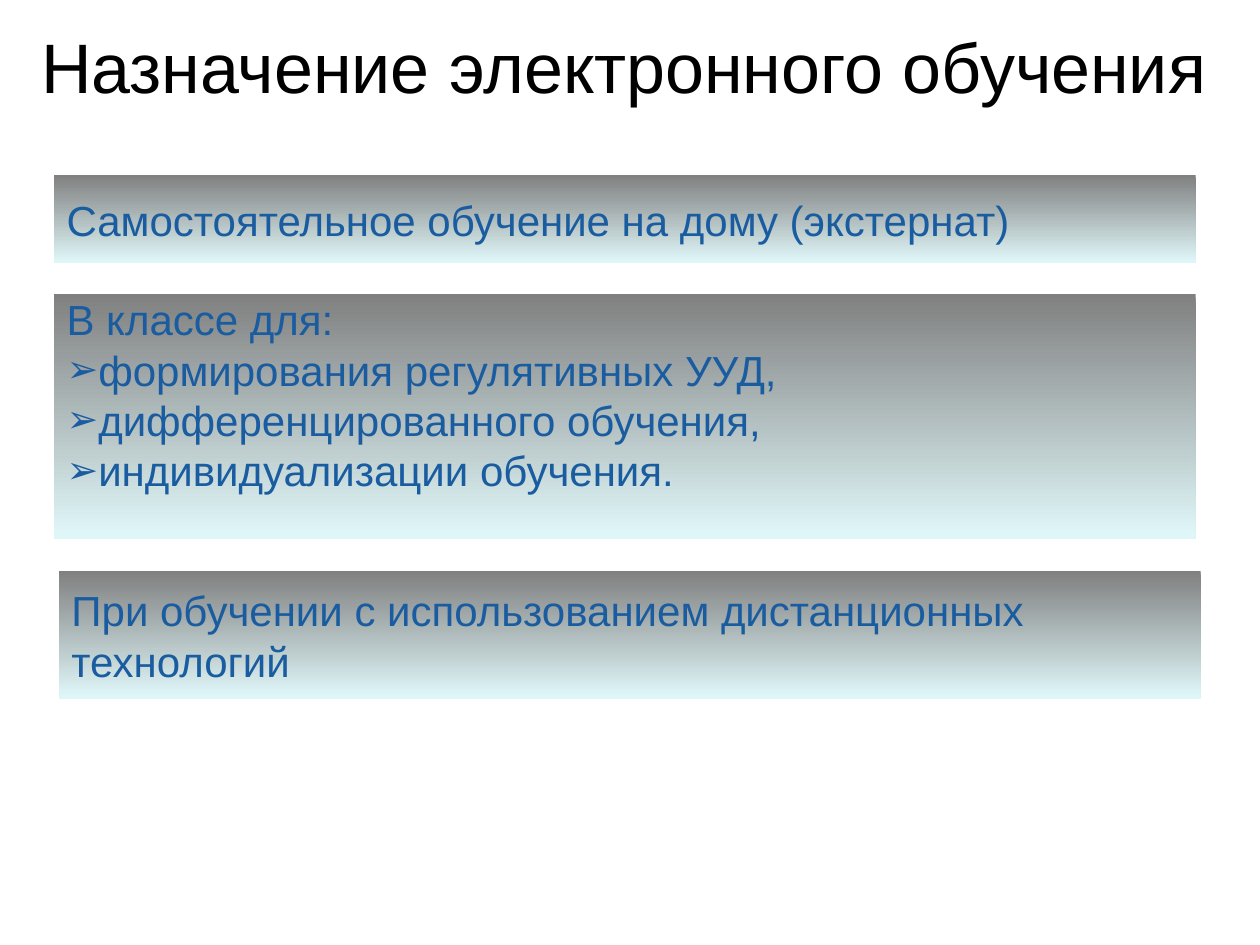
"""Builds a slide on the purposes of e-learning: a title and three gradient panels."""
from lxml import etree
from pptx import Presentation
from pptx import util as u
from pptx.dml import color
from pptx.enum import shapes, text
from pptx.oxml import ns

FONT = "Arial"
INK, BLUE, GREY, ICE = "000000", "1A5CA0", "808080", "DFF6F8"
HEADING = "Назначение электронного обучения"
PANEL_WIDTH = 652.3
PANELS = [
    {"left": 31, "top": 100.1, "height": 50.4, "anchor": text.MSO_ANCHOR.MIDDLE,
     "lead": "Самостоятельное обучение на дому (экстернат)", "points": []},
    {"left": 31, "top": 167.8, "height": 140.4, "anchor": text.MSO_ANCHOR.TOP,
     "lead": "В классе для:",
     "points": ["формирования регулятивных УУД,",
                "дифференцированного обучения,",
                "индивидуализации обучения."]},
    {"left": 33.8, "top": 326.2, "height": 73.4, "anchor": text.MSO_ANCHOR.MIDDLE,
     "lead": "При обучении с использованием дистанционных технологий", "points": []},
]


def rgb(value):
    return color.RGBColor.from_string(value)


def write(paragraph, words, size, ink, align):
    paragraph.alignment = align
    run = paragraph.add_run()
    run.text = words
    run.font.name, run.font.size = FONT, u.Pt(size)
    run.font.color.rgb = rgb(ink)


def add_bullet(paragraph):
    props = paragraph._p.get_or_add_pPr()
    tint = etree.SubElement(props, ns.qn("a:buClr"))
    etree.SubElement(tint, ns.qn("a:srgbClr"), val=BLUE)
    etree.SubElement(props, ns.qn("a:buSzPct"), val="90000")
    etree.SubElement(props, ns.qn("a:buFont"), typeface=FONT)
    etree.SubElement(props, ns.qn("a:buChar"), char="➢")


def add_panel(slide, panel):
    box = slide.shapes.add_shape(
        shapes.MSO_SHAPE.RECTANGLE, u.Pt(panel["left"]), u.Pt(panel["top"]),
        u.Pt(PANEL_WIDTH), u.Pt(panel["height"]))
    box.shadow.inherit = False
    box.line.fill.background()
    box.fill.gradient()
    box.fill.gradient_angle = 270
    for stop, (position, tone) in zip(box.fill.gradient_stops, [(0, GREY), (0.98, ICE)]):
        stop.position = position
        stop.color.rgb = rgb(tone)
    frame = box.text_frame
    frame.word_wrap = True
    frame.vertical_anchor = panel["anchor"]
    frame.margin_top = frame.margin_bottom = 0
    write(frame.paragraphs[0], panel["lead"], 24, BLUE, text.PP_ALIGN.LEFT)
    for point in panel["points"]:
        paragraph = frame.add_paragraph()
        write(paragraph, point, 24, BLUE, text.PP_ALIGN.LEFT)
        add_bullet(paragraph)


def main():
    deck = Presentation()
    deck.slide_width, deck.slide_height = u.Pt(720), u.Pt(540)
    slide = deck.slides.add_slide(deck.slide_layouts[5])
    title = slide.shapes.title
    title.left, title.top, title.width, title.height = map(u.Pt, (12.2, 12.2, 688.3, 50.4))
    title.text_frame.vertical_anchor = text.MSO_ANCHOR.MIDDLE
    write(title.text_frame.paragraphs[0], HEADING, 40, INK, text.PP_ALIGN.CENTER)
    for panel in PANELS:
        add_panel(slide, panel)
    deck.save("out.pptx")


if __name__ == "__main__":
    main()
